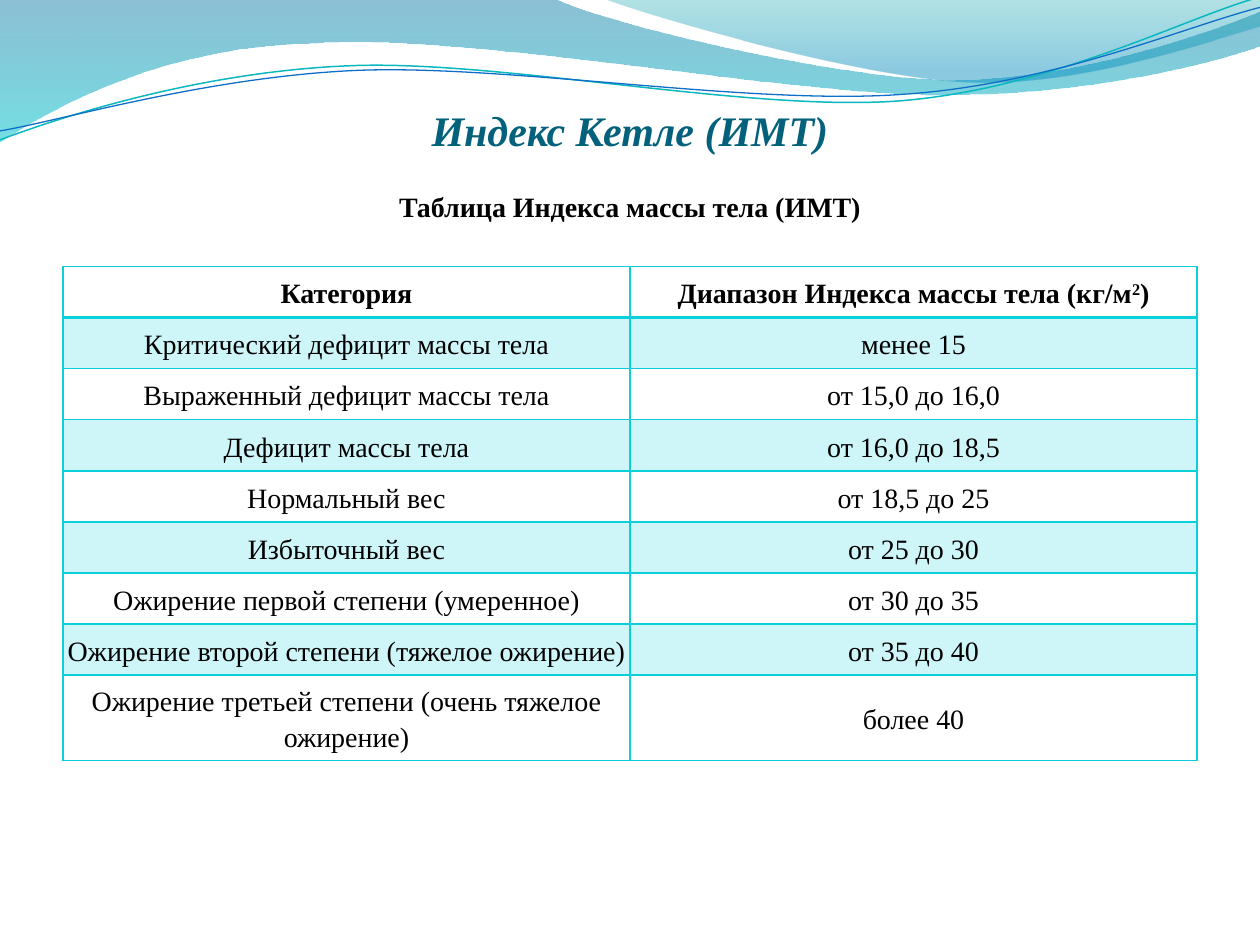
"""Build a slide with the body mass index category table under a wave banner."""
from pptx import Presentation
from pptx import util as u
from pptx.dml.color import RGBColor
from pptx.enum import text
from pptx.oxml import parse_xml
from pptx.oxml.ns import nsdecls, qn

THEME = {
    "font": "Times New Roman",
    "title": "04617B", "ink": "000000", "accent": "0BD0D9",
    "title_size": 24, "body_size": 16,
    "band_alpha": 20, "border": 1, "header_border": 2,
}

TITLE = "Индекс Кетле (ИМТ)"
SUBTITLE = "Таблица Индекса массы тела\u00a0(ИМТ)"
HEADER = ("Категория", "Диапазон Индекса массы тела (кг/м^2^)")
ROWS = [
    ("Критический дефицит массы тела", "менее 15"),
    ("Выраженный дефицит массы тела", "от 15,0 до 16,0"),
    ("Дефицит массы тела", "от 16,0 до 18,5"),
    ("Нормальный вес", "от 18,5 до 25"),
    ("Избыточный вес", "от 25 до 30"),
    ("Ожирение первой степени (умеренное)", "от 30 до 35"),
    ("Ожирение второй степени (тяжелое ожирение)", "от 35 до 40"),
    ("Ожирение третьей степени (очень тяжелое ожирение)", "более 40"),
]

LINE_ROTATION = 357.3
WAVES = [
    {"gradient": [(0, "0074A1", 45), (100, "00C6CF", 55)],
     "start": (0, 0),
     "segments": [
         [(11.18, -0.03)],
         [(12.09, 0.43), (16.87, 1.6), (19.25, 1.6)],
         [(21.67, 1.6), (24.33, 0.66), (25.4, 0.23)],
         [(25.43, 0.91)],
         [(24.97, 1.12), (22.1, 1.93), (18.95, 1.91)],
         [(15.8, 1.91), (9.7, 0.71), (6.53, 0.86)],
         [(3.28, 0.91), (1.17, 2.11), (-0.03, 2.87)],
         [(0, 0)]]},
    {"gradient": [(0, "00A1A9", 30), (80, "008BBF", 45)],
     "start": (12.17, -0.03),
     "segments": [
         [(12.93, 0.28), (17.32, 1.57), (19.53, 1.65)],
         [(21.74, 1.75), (24.41, 0.81), (25.4, 0.53)],
         [(25.4, 0)],
         [(12.17, -0.03)]]},
    {"line": ("0AB8BF", 0.85),
     "start": (-0.05, 2.22),
     "segments": [
         [(1.19, 1.82), (4.02, 1.04), (7.05, 1.06)],
         [(10.05, 1.07), (15.02, 2.37), (18.08, 2.29)],
         [(21.13, 2.2), (23.87, 0.91), (25.41, 0.55)]]},
    {"line": ("0F6FC6", 0.75),
     "start": (-0.04, 2.04),
     "segments": [
         [(1.16, 1.9), (4.18, 1.15), (7.2, 1.16)],
         [(10.25, 1.18), (15.13, 2.25), (18.19, 2.16)],
         [(21.21, 2.1), (23.93, 1.06), (25.45, 0.75)]]},
]


def bend(shape, segments):
    steps = iter(list(shape._element.iter(qn("a:lnTo"))))
    for segment in segments:
        group = [next(steps) for _ in segment]
        if len(group) == 3:
            curve = parse_xml(f'<a:cubicBezTo {nsdecls("a")}/>')
            group[0].addprevious(curve)
            for step in group:
                curve.append(step[0])
                step.getparent().remove(step)


def add_wave(slide, wave):
    closed = "gradient" in wave
    builder = slide.shapes.build_freeform(*map(u.Cm, wave["start"]))
    points = [point for segment in wave["segments"] for point in segment]
    builder.add_line_segments([(u.Cm(x), u.Cm(y)) for x, y in points], close=closed)
    shape = builder.convert_to_shape()
    bend(shape, wave["segments"])
    shape.shadow.inherit = False
    if closed:
        shape.line.fill.background()
        stops = "".join(
            f'<a:gs pos="{place * 1000}"><a:srgbClr val="{color}">'
            f'<a:alpha val="{alpha * 1000}"/></a:srgbClr></a:gs>'
            for place, color, alpha in wave["gradient"])
        gradient = parse_xml(f'<a:gradFill {nsdecls("a")} rotWithShape="1"><a:gsLst>{stops}'
                             '</a:gsLst><a:lin ang="5400000" scaled="0"/></a:gradFill>')
        shape._element.spPr.find(qn("a:custGeom")).addnext(gradient)
    else:
        color, width = wave["line"]
        shape.rotation = LINE_ROTATION
        shape.fill.background()
        shape.line.color.rgb = RGBColor.from_string(color)
        shape.line.width = u.Pt(width)


def write(paragraph, content, size, color, bold=False, italic=False):
    paragraph.alignment = text.PP_ALIGN.CENTER
    for index, part in enumerate(content.split("^")):
        run = paragraph.add_run()
        run.text = part
        font = run.font
        font.name, font.size = THEME["font"], u.Pt(size)
        font.bold, font.italic = bold, italic
        font.color.rgb = RGBColor.from_string(color)
        if index % 2:
            run._r.get_or_add_rPr().set("baseline", "30000")
    paragraph._p.append(parse_xml(f'<a:endParaRPr {nsdecls("a")} sz="{size * 100}"/>'))


def add_heading(slide, box, content, size, color, anchor, italic=False):
    frame = slide.shapes.add_textbox(*map(u.Cm, box)).text_frame
    frame.word_wrap = True
    frame.vertical_anchor = anchor
    frame.margin_left = frame.margin_right = frame.margin_bottom = 0
    frame.margin_top = 0
    write(frame.paragraphs[0], content, size, color, bold=True, italic=italic)


def format_cell(cell, content, row):
    header = row == 0
    cell.vertical_anchor = text.MSO_ANCHOR.MIDDLE
    cell.margin_left = cell.margin_right = u.Cm(0.08)
    cell.margin_top = cell.margin_bottom = u.Cm(0.08)
    paragraph = cell.text_frame.paragraphs[0]
    paragraph.line_spacing = 1.15
    write(paragraph, content, THEME["body_size"], THEME["ink"], bold=header)
    properties = cell._tc.get_or_add_tcPr()
    for side in "LRTB":
        heavy = (row, side) in ((0, "B"), (1, "T"))
        width = u.Pt(THEME["header_border" if heavy else "border"])
        properties.append(parse_xml(
            f'<a:ln{side} {nsdecls("a")} w="{width}"><a:solidFill>'
            f'<a:srgbClr val="{THEME["accent"]}"/></a:solidFill></a:ln{side}>'))
    if row % 2:
        cell.fill.solid()
        cell.fill.fore_color.rgb = RGBColor.from_string(THEME["accent"])
        color = properties.find(qn("a:solidFill")).find(qn("a:srgbClr"))
        color.append(parse_xml(
            f'<a:alpha {nsdecls("a")} val="{THEME["band_alpha"] * 1000}"/>'))
    else:
        cell.fill.background()


def add_index_table(slide):
    records = [HEADER, *ROWS]
    row_height = 1.03
    box = (1.27, 5.37, 22.86, row_height * len(records))
    table = slide.shapes.add_table(len(records), len(HEADER), *map(u.Cm, box)).table
    table.first_row = table.horz_banding = False
    for row, record in enumerate(records):
        table.rows[row].height = u.Cm(row_height)
        for column, content in enumerate(record):
            format_cell(table.cell(row, column), content, row)


def main():
    presentation = Presentation()
    presentation.slide_width, presentation.slide_height = u.Cm(25.4), u.Cm(19.05)
    slide = presentation.slides.add_slide(presentation.slide_layouts[6])
    for wave in WAVES:
        add_wave(slide, wave)
    add_heading(slide, (1.27, 1.96, 22.86, 1.17), TITLE, THEME["title_size"],
                THEME["title"], text.MSO_ANCHOR.BOTTOM, italic=True)
    add_index_table(slide)
    add_heading(slide, (7.72, 3.68, 9.96, 0.94), SUBTITLE, THEME["body_size"],
                THEME["ink"], text.MSO_ANCHOR.MIDDLE)
    presentation.save("out.pptx")


if __name__ == "__main__":
    main()
